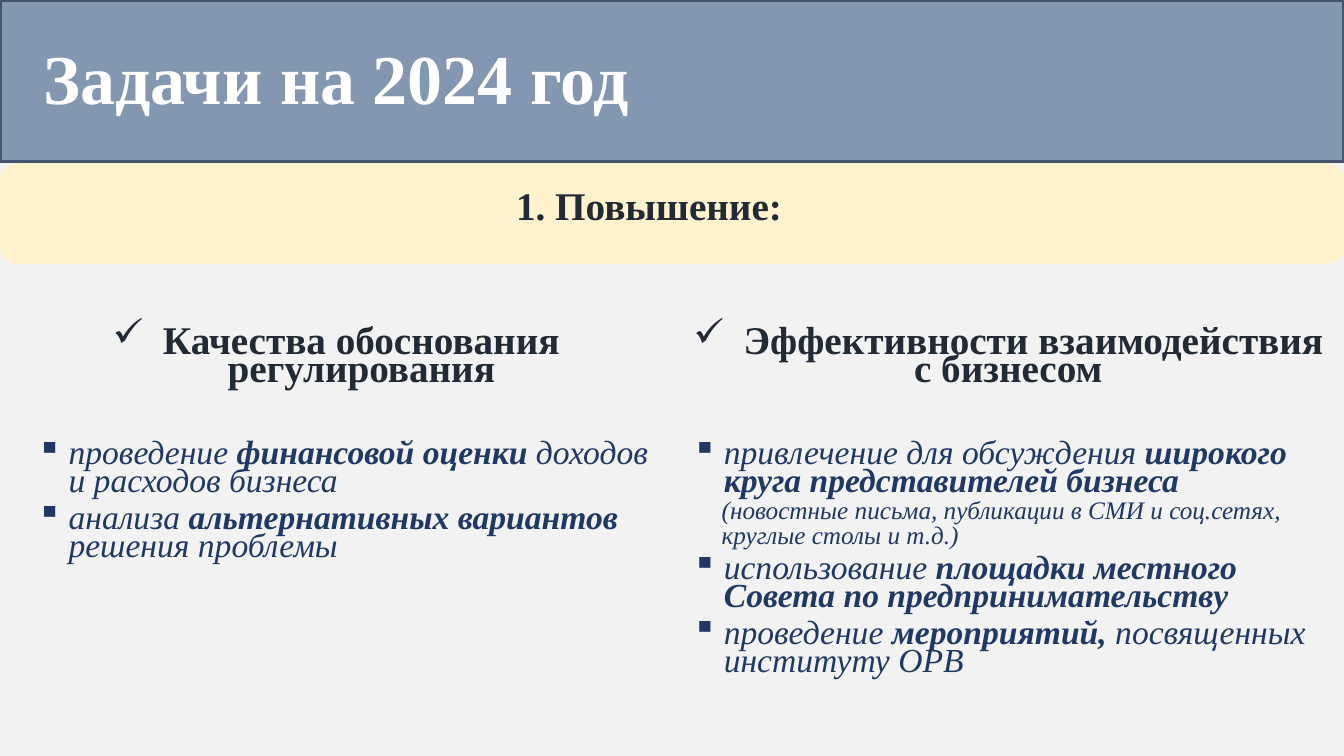
"""Build the slide with the tasks for 2024: raising quality and effectiveness."""
import pptx
import pptx.dml.color
import pptx.enum.shapes
import pptx.enum.text
import pptx.oxml.ns
import pptx.util
from lxml import etree

Pt = pptx.util.Pt
RGB = pptx.dml.color.RGBColor.from_string
ALIGN = pptx.enum.text.PP_ALIGN
SHAPE = pptx.enum.shapes.MSO_SHAPE

THEME = {
    "font": "Times New Roman",
    "background": "F2F2F2",
    "banner": "8497B0",
    "banner_line": "44546A",
    "band": "FFF2CC",
    "title": {"size": 50, "color": "FFFFFF", "italic": False},
    "heading": {"size": 28, "color": "222A35", "italic": False},
    "task": {"size": 24, "color": "203864", "italic": True},
    "note": {"size": 18, "color": "203864", "italic": True},
}

LAYOUT = {
    "title": {"alignment": ALIGN.LEFT, "line_spacing": Pt(28)},
    "heading": {"alignment": ALIGN.CENTER, "line_spacing": Pt(20)},
    "task": {"alignment": ALIGN.LEFT, "line_spacing": Pt(20), "space_before": Pt(6)},
    "note": {"alignment": ALIGN.LEFT, "line_spacing": Pt(18)},
}


def place(shape, box):
    """Set left, top, width and height from a box in points."""
    for name, value in zip(("left", "top", "width", "height"), box):
        setattr(shape, name, Pt(value))


def write(shape, paragraphs):
    """Write (style, bullet, indent, hanging, runs) paragraphs; runs are (text, bold)."""
    frame = shape.text_frame
    frame_format = {
        "word_wrap": True,
        "auto_size": pptx.enum.text.MSO_AUTO_SIZE.SHAPE_TO_FIT_TEXT,
        "vertical_anchor": pptx.enum.text.MSO_ANCHOR.TOP,
    }
    for name, value in frame_format.items():
        setattr(frame, name, value)
    for index, (style, bullet, indent, hanging, runs) in enumerate(paragraphs):
        paragraph = frame.paragraphs[0] if index == 0 else frame.add_paragraph()
        for name, value in LAYOUT[style].items():
            setattr(paragraph, name, value)
        properties = paragraph._p.get_or_add_pPr()
        if indent:
            properties.set("marL", str(Pt(indent)))
            properties.set("indent", str(-Pt(hanging)))
        if bullet:
            mark = etree.SubElement(properties, pptx.oxml.ns.qn("a:buChar"))
            mark.set("char", bullet)
        look = THEME[style]
        for text, bold in runs:
            run = paragraph.add_run()
            run.text = text
            font_format = {
                "name": THEME["font"],
                "size": Pt(look["size"]),
                "bold": bold,
                "italic": look["italic"],
            }
            for name, value in font_format.items():
                setattr(run.font, name, value)
            run.font.color.rgb = RGB(look["color"])


presentation = pptx.Presentation()
presentation.slide_width = Pt(960)
presentation.slide_height = Pt(540)
slide = presentation.slides.add_slide(presentation.slide_layouts[5])
slide.background.fill.solid()
slide.background.fill.fore_color.rgb = RGB(THEME["background"])

title = slide.shapes.title
panels = [
    (SHAPE.RECTANGLE, (0, 0, 960, 115.2), "banner", "banner_line"),
    (SHAPE.ROUNDED_RECTANGLE, (0, 116.6, 960, 72), "band", None),
]
for kind, box, fill, line in panels:
    panel = slide.shapes.add_shape(kind, *map(Pt, box))
    panel.shadow.inherit = False
    panel.fill.solid()
    panel.fill.fore_color.rgb = RGB(THEME[fill])
    if line:
        panel.line.color.rgb = RGB(THEME[line])
        panel.line.width = Pt(2.25)
    else:
        panel.line.fill.background()
    title.element.addprevious(panel.element)

place(title, (23.8, 53.3, 936, 35.2))
write(title, [("title", None, 0, 0, [("Задачи на 2024 год", True)])])

CHECK = ("heading", "✓", 36, 36)
PLAIN = ("heading", None, 0, 0)
TASK = ("task", "▪", 22.5, 22.5)
NOTE = ("note", None, 21, 0)

texts = [
    ((304.6, 139.7, 318, 27.4), [(*PLAIN, [("1. Повышение:", True)])]),
    ((0, 235.4, 480, 49), [(*CHECK, [("Качества обоснования регулирования", True)])]),
    ((487.4, 235.4, 472.6, 47.5), [
        (*CHECK, [("Эффективности взаимодействия ", True)]),
        (*PLAIN, [("с бизнесом ", True)]),
    ]),
    ((19.4, 313.2, 460, 95), [
        (*TASK, [("проведение ", False), ("финансовой оценки", True),
                 (" доходов и расходов бизнеса", False)]),
        (*TASK, [("анализа ", False), ("альтернативных вариантов ", True),
                 ("решения проблемы", False)]),
    ]),
    ((487.4, 313.2, 459.4, 207.4), [
        (*TASK, [("привлечение для обсуждения ", False),
                 ("широкого круга представителей бизнеса", True)]),
        (*NOTE, [("(новостные письма, публикации в СМИ и соц.сетях, "
                  "круглые столы и т.д.)", False)]),
        (*TASK, [("использование ", False),
                 ("площадки местного Совета по предпринимательству", True)]),
        (*TASK, [("проведение ", False), ("мероприятий,", True),
                 (" посвященных институту ОРВ", False)]),
    ]),
]
for box, paragraphs in texts:
    write(slide.shapes.add_textbox(*map(Pt, box)), paragraphs)

presentation.save("out.pptx")
